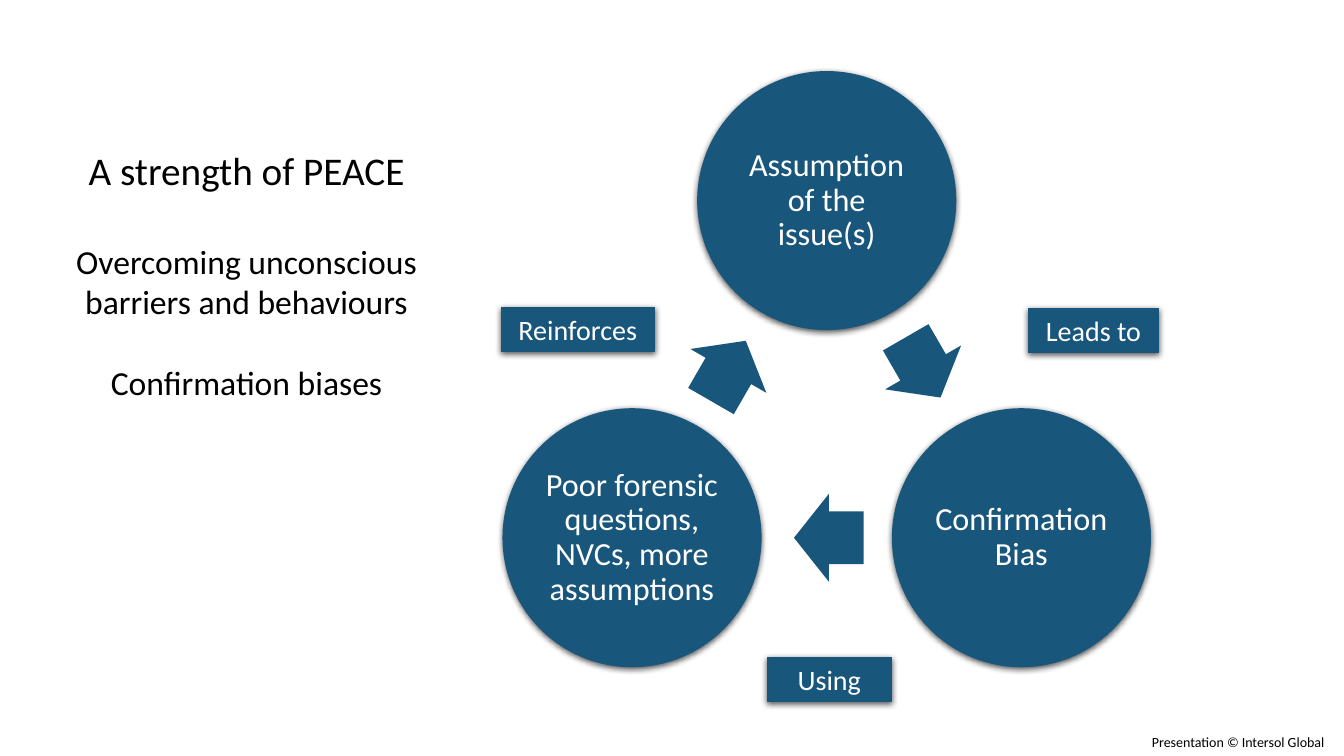
from math import cos, radians, sin

from lxml import etree
from pptx import Presentation
from pptx.dml.color import RGBColor
from pptx.enum.shapes import MSO_SHAPE
from pptx.enum.text import MSO_ANCHOR, PP_ALIGN
from pptx.oxml import parse_xml
from pptx.oxml.ns import nsdecls
from pptx.util import Inches, Pt

BLUE, WHITE, BLACK = "19567C", "FFFFFF", "000000"
CENTRE_X, CENTRE_Y, RADIUS = 8.2, 4.22, 2.23
CIRCLE = 2.57
ARROW_W, ARROW_H, ARROW_BACK = 0.69, 0.87, 0.02

STAGES = [
    "Assumption of the\vissue(s)",
    "Confirmation Bias",
    "Poor forensic questions, NVCs, more assumptions",
]
LABELS = [
    ("Leads to", 10.2, 3.06, 1.29),
    ("Using", 7.61, 6.52, 1.23),
    ("Reinforces", 4.97, 3.05, 1.52),
]
# text, size, space before
INTRO = [
    ("A strength of PEACE", 28, 0),
    ("Overcoming unconscious barriers and behaviours", 24, 34),
    ("Confirmation biases", 24, 29),
]


def rgb(value):
    return RGBColor.from_string(value)


def write_paragraph(p, text, size, color):
    p.text = text
    p.alignment = PP_ALIGN.CENTER
    for r in p.runs:
        r.font.name = "Calibri"
        r.font.size = Pt(size)
        r.font.color.rgb = rgb(color)


def add_filled(s, kind, x, y, w, h):
    sp = s.shapes.add_shape(kind, Inches(x), Inches(y), Inches(w), Inches(h))
    sp.shadow.inherit = False
    sp.fill.solid()
    sp.fill.fore_color.rgb = rgb(BLUE)
    sp.line.fill.background()
    return sp


def add_shadow(sp):
    """Fill the shape's empty effect list with a soft shadow below it."""
    effects = sp.element.spPr.find("{*}effectLst")
    effects.append(parse_xml(
        f'<a:outerShdw {nsdecls("a")} blurRad="{Pt(4.5)}" dist="{Pt(1.5)}" '
        'dir="5400000" rotWithShape="0"><a:srgbClr val="000000">'
        '<a:alpha val="63000"/></a:srgbClr></a:outerShdw>'))


def add_stage(s, text, x, y):
    """Draw a circle centred on x, y."""
    sp = add_filled(s, MSO_SHAPE.OVAL, x - CIRCLE / 2, y - CIRCLE / 2, CIRCLE, CIRCLE)
    add_shadow(sp)
    tf = sp.text_frame
    tf.word_wrap = True
    tf.vertical_anchor = MSO_ANCHOR.MIDDLE
    tf.margin_left = tf.margin_right = tf.margin_top = tf.margin_bottom = Inches(0.03)
    p = tf.paragraphs[0]
    write_paragraph(p, text, 23, WHITE)
    p.line_spacing = 0.9


def add_arrow(s, x, y, rotation):
    """Draw an arrow centred on x, y."""
    sp = add_filled(s, MSO_SHAPE.RIGHT_ARROW, x - ARROW_W / 2, y - ARROW_H / 2,
                    ARROW_W, ARROW_H)
    sp.adjustments[0], sp.adjustments[1] = 0.6, 0.5
    sp.rotation = rotation


def add_cycle(s):
    for i, text in enumerate(STAGES):
        angle = radians(120 * i - 90)
        add_stage(s, text, CENTRE_X + RADIUS * cos(angle), CENTRE_Y + RADIUS * sin(angle))
        # Each arrow sits halfway to the next circle
        middle, turn = radians(120 * i - 30), 60 + 120 * i
        add_arrow(s,
                  CENTRE_X + RADIUS / 2 * cos(middle) - ARROW_BACK * cos(radians(turn)),
                  CENTRE_Y + RADIUS / 2 * sin(middle) - ARROW_BACK * sin(radians(turn)),
                  turn)


def add_label(s, text, x, y, w):
    sp = add_filled(s, MSO_SHAPE.RECTANGLE, x, y, w, 0.44)
    sp.line.color.rgb = rgb(BLUE)
    sp.line.width = Pt(0.75)
    add_shadow(sp)
    sp.text_frame.vertical_anchor = MSO_ANCHOR.TOP
    write_paragraph(sp.text_frame.paragraphs[0], text, 20, WHITE)


def add_text(s, lines, x, y, w, h):
    tf = s.shapes.add_textbox(Inches(x), Inches(y), Inches(w), Inches(h)).text_frame
    tf.word_wrap = True
    for i, (text, size, before) in enumerate(lines):
        p = tf.add_paragraph() if i else tf.paragraphs[0]
        write_paragraph(p, text, size, BLACK)
        if before:
            p.space_before = Pt(before)


def main():
    prs = Presentation()
    prs.slide_width, prs.slide_height = Inches(13.33), Inches(7.5)
    s = prs.slides.add_slide(prs.slide_layouts[6])
    add_cycle(s)
    add_text(s, INTRO, 0.28, 1.4, 4.33, 3.06)
    for label in LABELS:
        add_label(s, *label)
    add_text(s, [("Presentation © Intersol Global", 10, 0)], 11.23, 7.23, 2.1, 0.27)
    prs.save("out.pptx")


if __name__ == "__main__":
    main()
